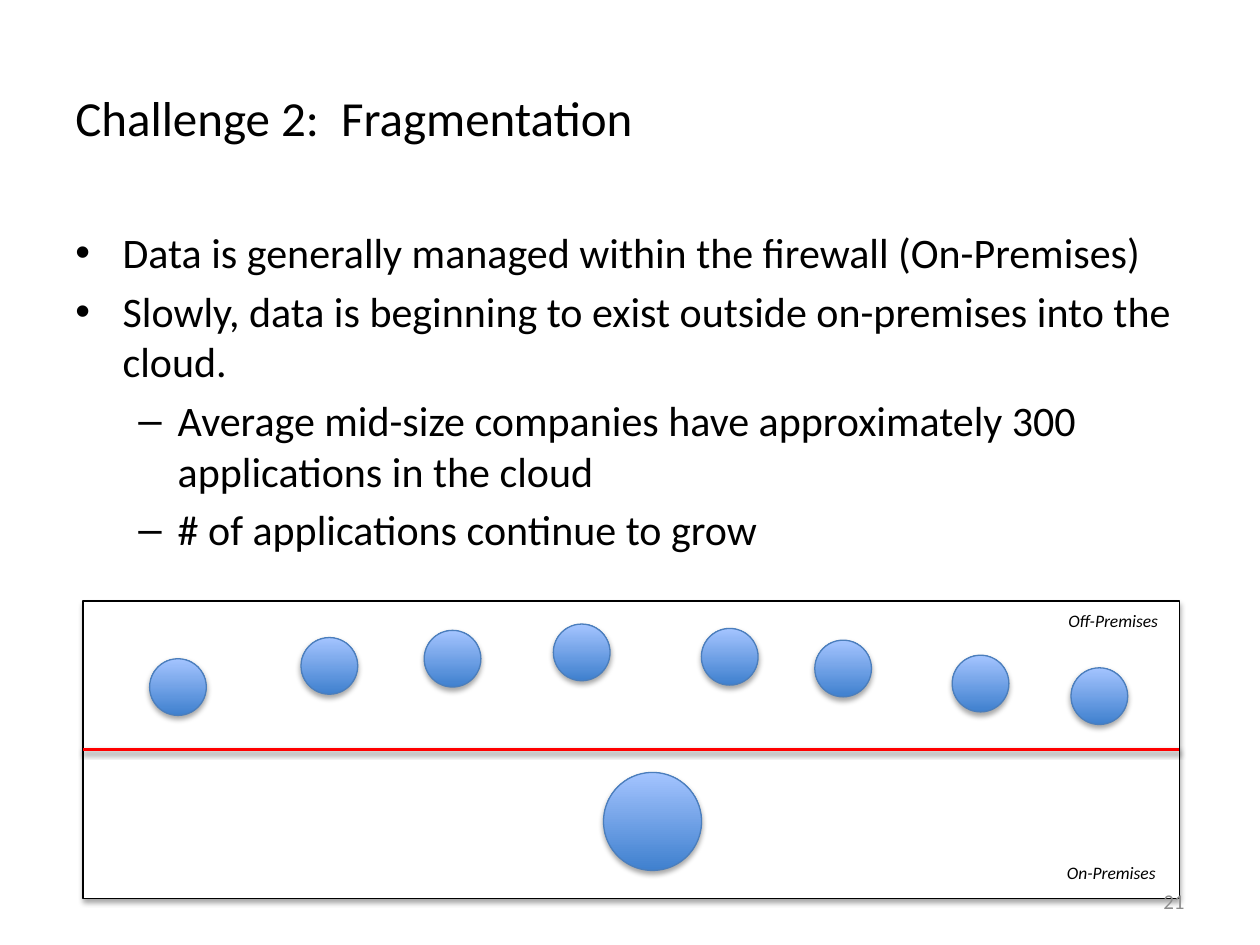
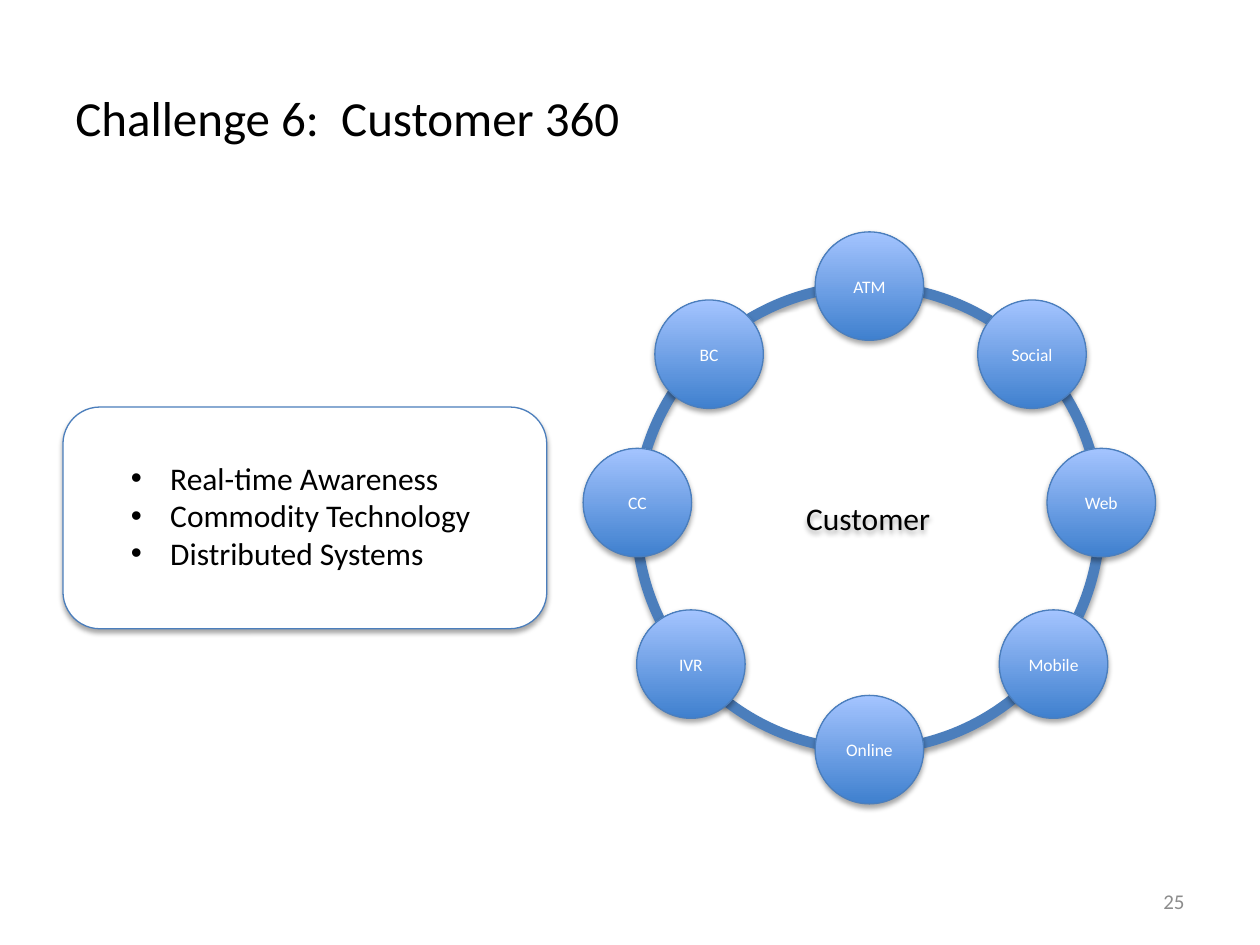
import pptx
import pptx.dml.color
import pptx.enum.shapes
import pptx.enum.text
import pptx.oxml.ns
import pptx.util
from lxml import etree

Pt = pptx.util.Pt
RGBColor = pptx.dml.color.RGBColor
SHAPE = pptx.enum.shapes.MSO_SHAPE
ALIGN = pptx.enum.text.PP_ALIGN
ANCHOR = pptx.enum.text.MSO_ANCHOR
AUTO_SIZE = pptx.enum.text.MSO_AUTO_SIZE

# Content: boxes are left, top, width, height in points
FRAGMENTATION = {
    "title": "Challenge 2:  Fragmentation",
    "number": "21",
    "bullets": [
        ("Data is generally managed within the firewall (On-Premises)", 0),
        ("Slowly, data is beginning to exist outside on-premises into the cloud.", 0),
        ("Average mid-size companies have approximately 300 applications in the cloud", 1),
        ("# of applications continue to grow", 1),
    ],
}
PREMISES_BOX = (47.5, 343.4, 626.4, 170)
PREMISES_LABELS = [
    ("On-Premises", (602.6, 488.9, 68.4, 19.4)),
    ("Off-Premises", (603.4, 344.9, 69.1, 19.4)),
]
ON_PREMISES_DATA = (344.9, 441.4, 56)
CLOUD_SIZE = 32.4
CLOUD_DATA = [
    (85.5, 376.4), (172, 364.3), (242.4, 360.2), (316.2, 356.6),
    (400.8, 359.1), (465.6, 365.8), (544.1, 374.4), (612, 381.6),
]

CUSTOMER = {
    "title": "Challenge 6:  Customer 360",
    "number": "25",
    "bullets": ["Real-time Awareness", "Commodity Technology", "Distributed Systems"],
}
RING_BOX = (363.6, 163.4, 265, 265)
CHANNEL_SIZE = 62
# Each row of channels: top, then (name, left)
CHANNEL_ROWS = [
    (132.5, [("ATM", 465.8)]),
    (171.4, [("BC", 374.2), ("Social", 558.7)]),
    (256.2, [("CC", 333.2), ("Web", 598.3)]),
    (348.5, [("IVR", 363.8), ("Mobile", 571)]),
    (397.4, [("Online", 465.8)]),
]

# Shared style
FONT = "Calibri"
BLACK = RGBColor(0x00, 0x00, 0x00)
WHITE = RGBColor(0xFF, 0xFF, 0xFF)
RED = RGBColor(0xFF, 0x00, 0x00)
GREY = RGBColor(0x8C, 0x8C, 0x8C)
BLUE_LINE = RGBColor(0x4B, 0x7E, 0xBC)
BLUE_DARK = RGBColor(0x3F, 0x80, 0xCE)
BLUE_LIGHT = RGBColor(0xA4, 0xC4, 0xFF)
TITLE_BOX = (36, 21.6, 648, 90)
BODY_BOX = (36, 126, 648, 356.4)
NUMBER_BOX = (516.2, 500.5, 167.8, 28.8)
LIST_CARD_BOX = (36, 232.6, 276.5, 126.7)
LIST_BOX = (67.7, 258.5, 212.4, 72.7)
# Bullet levels: character, left margin, hanging indent
BODY_LEVELS = [("•", 27, 27), ("–", 58.5, 22.5)]
LIST_LEVELS = [("•", 22.5, 22.5)]


def points(box):
    return [Pt(length) for length in box]


def add_xml(parent, tag, **attributes):
    element = etree.SubElement(parent, pptx.oxml.ns.qn(tag))
    for name, value in attributes.items():
        element.set(name, str(value))
    return element


def add_shadow(shape, opacity=35, distance=1.8):
    properties = shape._element.spPr
    effects = properties.find(pptx.oxml.ns.qn("a:effectLst"))
    if effects is None:
        effects = add_xml(properties, "a:effectLst")
    shadow = add_xml(effects, "a:outerShdw", blurRad=int(Pt(3.1)), dist=int(Pt(distance)),
                     dir=5400000, rotWithShape=0)
    color = add_xml(shadow, "a:srgbClr", val=str(BLACK))
    add_xml(color, "a:alpha", val=opacity * 1000)


def write_text(shape, lines, size, color=BLACK, align=ALIGN.LEFT, anchor=ANCHOR.TOP,
               italic=False, wrap=True, levels=None, space_before=0):
    """Fill a shape with lines: a string, or a list of (text, level) pairs."""
    frame = shape.text_frame
    frame.word_wrap = wrap
    frame.auto_size = AUTO_SIZE.NONE if wrap else AUTO_SIZE.SHAPE_TO_FIT_TEXT
    frame.vertical_anchor = anchor
    if isinstance(lines, str):
        lines = [(lines, 0)]
    for index, (text, level) in enumerate(lines):
        paragraph = frame.add_paragraph() if index else frame.paragraphs[0]
        paragraph.alignment = align
        paragraph.level = level
        paragraph.space_before = Pt(space_before)
        run = paragraph.add_run()
        run.text = text
        run.font.name = FONT
        run.font.size = Pt(size)
        run.font.italic = italic
        run.font.color.rgb = color
        if levels:
            character, margin, hanging = levels[level]
            properties = paragraph._p.get_or_add_pPr()
            properties.set("marL", str(int(Pt(margin))))
            properties.set("indent", str(-int(Pt(hanging))))
            add_xml(properties, "a:buFont", typeface="Arial")
            add_xml(properties, "a:buChar", char=character)


def add_text(slide, box, lines, size, fill=None, **text_format):
    shape = slide.shapes.add_textbox(*points(box))
    if fill is not None:
        shape.fill.solid()
        shape.fill.fore_color.rgb = fill
    write_text(shape, lines, size, **text_format)


def add_panel(slide, kind, box, fill=WHITE, line=BLUE_LINE, width=0.75):
    """Add an outlined, shadowed shape; fill may be a colour, None or "gradient"."""
    shape = slide.shapes.add_shape(kind, *points(box))
    shape.shadow.inherit = False
    if fill is None:
        shape.fill.background()
    elif fill == "gradient":
        shape.fill.gradient()
        shape.fill.gradient_angle = 90
        for stop, color in zip(shape.fill.gradient_stops, (BLUE_DARK, BLUE_LIGHT)):
            stop.color.rgb = color
    else:
        shape.fill.solid()
        shape.fill.fore_color.rgb = fill
    shape.line.color.rgb = line
    shape.line.width = Pt(width)
    add_shadow(shape)
    return shape


def add_ball(slide, left, top, size):
    return add_panel(slide, SHAPE.OVAL, (left, top, size, size), fill="gradient")


def add_slide(presentation, content):
    slide = presentation.slides.add_slide(presentation.slide_layouts[6])
    add_text(slide, TITLE_BOX, content["title"], 28, anchor=ANCHOR.MIDDLE)
    return slide


def add_number(slide, content):
    add_text(slide, NUMBER_BOX, content["number"], 12, color=GREY,
             align=ALIGN.RIGHT, anchor=ANCHOR.MIDDLE)


def build_fragmentation(presentation):
    slide = add_slide(presentation, FRAGMENTATION)
    add_text(slide, BODY_BOX, FRAGMENTATION["bullets"], 24,
             levels=BODY_LEVELS, space_before=4.8)

    # Premises panel, split by the firewall line
    panel = add_panel(slide, SHAPE.RECTANGLE, PREMISES_BOX, line=BLACK)
    firewall = slide.shapes.add_connector(
        pptx.enum.shapes.MSO_CONNECTOR.STRAIGHT, 0, 0, 0, 0)
    firewall.begin_connect(panel, 1)
    firewall.end_connect(panel, 3)
    firewall.line.color.rgb = RED
    firewall.line.width = Pt(2)
    add_shadow(firewall, opacity=38, distance=1.6)
    for label, box in PREMISES_LABELS:
        add_text(slide, box, label, 10, fill=WHITE, italic=True, wrap=False)

    # Data stores on both sides
    add_ball(slide, *ON_PREMISES_DATA)
    for left, top in CLOUD_DATA:
        add_ball(slide, left, top, CLOUD_SIZE)
    add_number(slide, FRAGMENTATION)


def build_customer(presentation):
    slide = add_slide(presentation, CUSTOMER)

    # Ring of channels around the customer
    centred = {"align": ALIGN.CENTER, "anchor": ANCHOR.MIDDLE}
    ring = add_panel(slide, SHAPE.OVAL, RING_BOX, fill=None, width=6)
    write_text(ring, "Customer", 18, **centred)
    for top, channels in CHANNEL_ROWS:
        for name, left in channels:
            ball = add_ball(slide, left, top, CHANNEL_SIZE)
            write_text(ball, name, 10, color=WHITE, **centred)

    # Card with the needs
    add_panel(slide, SHAPE.ROUNDED_RECTANGLE, LIST_CARD_BOX)
    add_text(slide, LIST_BOX, [(text, 0) for text in CUSTOMER["bullets"]], 18,
             levels=LIST_LEVELS, wrap=False)
    add_number(slide, CUSTOMER)


def main():
    presentation = pptx.Presentation()
    presentation.slide_width, presentation.slide_height = Pt(720), Pt(540)
    build_fragmentation(presentation)
    build_customer(presentation)
    presentation.save("out.pptx")


if __name__ == "__main__":
    main()
